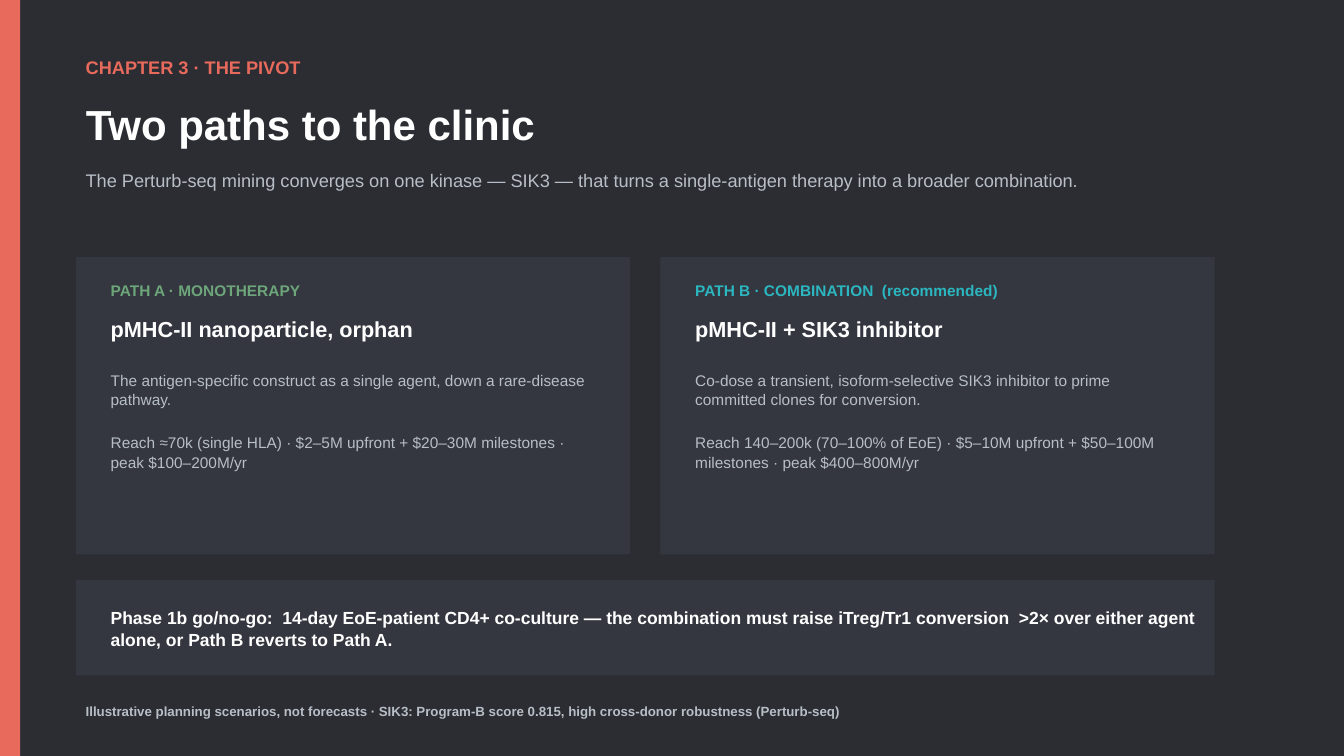
import pptx
import pptx.util
import pptx.dml.color
import pptx.enum.shapes
import pptx.enum.text

Cm = pptx.util.Cm
Pt = pptx.util.Pt
ANCHOR = pptx.enum.text.MSO_ANCHOR

FONT = "Arial"
DARK, PANEL = "2B2D33", "34373F"
CORAL, GREEN, TEAL = "E86A5C", "6DA67A", "2BB6C0"
WHITE, GREY = "FFFFFF", "B8BEC6"

LEFT = 1.91    # left margin, cm
INSET = 0.63   # text inset inside a panel, cm


def color(code):
    return pptx.dml.color.RGBColor.from_string(code)


def block(slide, box, fill):
    """Plain filled rectangle."""
    kind = pptx.enum.shapes.MSO_SHAPE.RECTANGLE
    shape = slide.shapes.add_shape(kind, *map(Cm, box))
    shape.shadow.inherit = False
    shape.fill.solid()
    shape.fill.fore_color.rgb = color(fill)
    shape.line.fill.background()


def write(shape, lines, size, tone, bold=False, anchor=ANCHOR.TOP, gap=0):
    """Fill a text shape, with a gap between its paragraphs."""
    frame = shape.text_frame
    frame.word_wrap = True
    frame.auto_size = pptx.enum.text.MSO_AUTO_SIZE.NONE
    frame.vertical_anchor = anchor
    frame.text = "\n".join(lines)
    for i, para in enumerate(frame.paragraphs):
        para.alignment = pptx.enum.text.PP_ALIGN.LEFT
        para.line_spacing = 1.05
        para.space_before = Pt(gap if i else 0)
        para.font.name = FONT
        para.font.size = Pt(size)
        para.font.bold = bold
        para.font.color.rgb = color(tone)


def label(slide, box, lines, *style, **more):
    write(slide.shapes.add_textbox(*map(Cm, box)), lines, *style, **more)


def header(slide, box, chapter, title, lead):
    x, y, w, h = box
    label(slide, (x, y, w, 1.02), [chapter], 13, CORAL, True)
    # Title placeholder
    head = slide.shapes.title
    head.left, head.top, head.width, head.height = map(
        Cm, (x, y + 1.02, w, 1.78))
    write(head, [title], 30, WHITE, True)
    # Lead sentence
    label(slide, (x, y + 2.84, w, h - 2.84), [lead], 13, GREY)


def card(slide, box, tag, tone, name, facts):
    x, y, w, h = box
    block(slide, box, PANEL)
    x, w = x + INSET, w - 2 * INSET
    label(slide, (x, y + 0.46, w, 0.76), [tag], 11, tone, True)
    label(slide, (x, y + 1.32, w, 1.27), [name], 15.5, WHITE, True)
    label(slide, (x, y + 2.72, w, h - 3.05), facts, 11, GREY, gap=17)


def banner(slide, box, text):
    x, y, w, h = box
    block(slide, box, PANEL)
    label(slide, (x + INSET, y + 0.2, w - 0.76, h - 0.38), [text],
          12.5, WHITE, True, anchor=ANCHOR.MIDDLE)


def main():
    deck = pptx.Presentation()
    deck.slide_width, deck.slide_height = Cm(33.87), Cm(19.05)
    slide = deck.slides.add_slide(deck.slide_layouts.get_by_name("Title Only"))
    slide.background.fill.solid()
    slide.background.fill.fore_color.rgb = color(DARK)

    # Accent strip and header
    block(slide, (0, 0, 0.51, 19.05), CORAL)
    header(slide, (LEFT, 1.27, 29.46, 4.67),
           "CHAPTER 3 · THE PIVOT",
           "Two paths to the clinic",
           "The Perturb-seq mining converges on one kinase — SIK3 — that "
           "turns a single-antigen therapy into a broader combination.")

    # Two paths side by side
    paths = [
        ("PATH A · MONOTHERAPY", GREEN, "pMHC-II nanoparticle, orphan",
         ["The antigen-specific construct as a single agent, down a "
          "rare-disease pathway.",
          "Reach ≈70k (single HLA) · $2–5M upfront + $20–30M milestones · "
          "peak $100–200M/yr"]),
        ("PATH B · COMBINATION  (recommended)", TEAL,
         "pMHC-II + SIK3 inhibitor",
         ["Co-dose a transient, isoform-selective SIK3 inhibitor to prime "
          "committed clones for conversion.",
          "Reach 140–200k (70–100% of EoE) · $5–10M upfront + $50–100M "
          "milestones · peak $400–800M/yr"]),
    ]
    wide, space = 13.97, 0.76
    for i, path in enumerate(paths):
        card(slide, (LEFT + i * (wide + space), 6.48, wide, 7.49), *path)

    # Decision rule and footnote
    banner(slide, (LEFT, 14.61, 2 * wide + space, 2.41),
           "Phase 1b go/no-go:  14-day EoE-patient CD4+ co-culture — the "
           "combination must raise iTreg/Tr1 conversion  >2× over either "
           "agent alone, or Path B reverts to Path A.")
    label(slide, (LEFT, 17.58, 29.46, 1.27),
          ["Illustrative planning scenarios, not forecasts · SIK3: Program-B "
           "score 0.815, high cross-donor robustness (Perturb-seq)"],
          9.5, GREY, True)

    deck.save("out.pptx")


if __name__ == "__main__":
    main()
